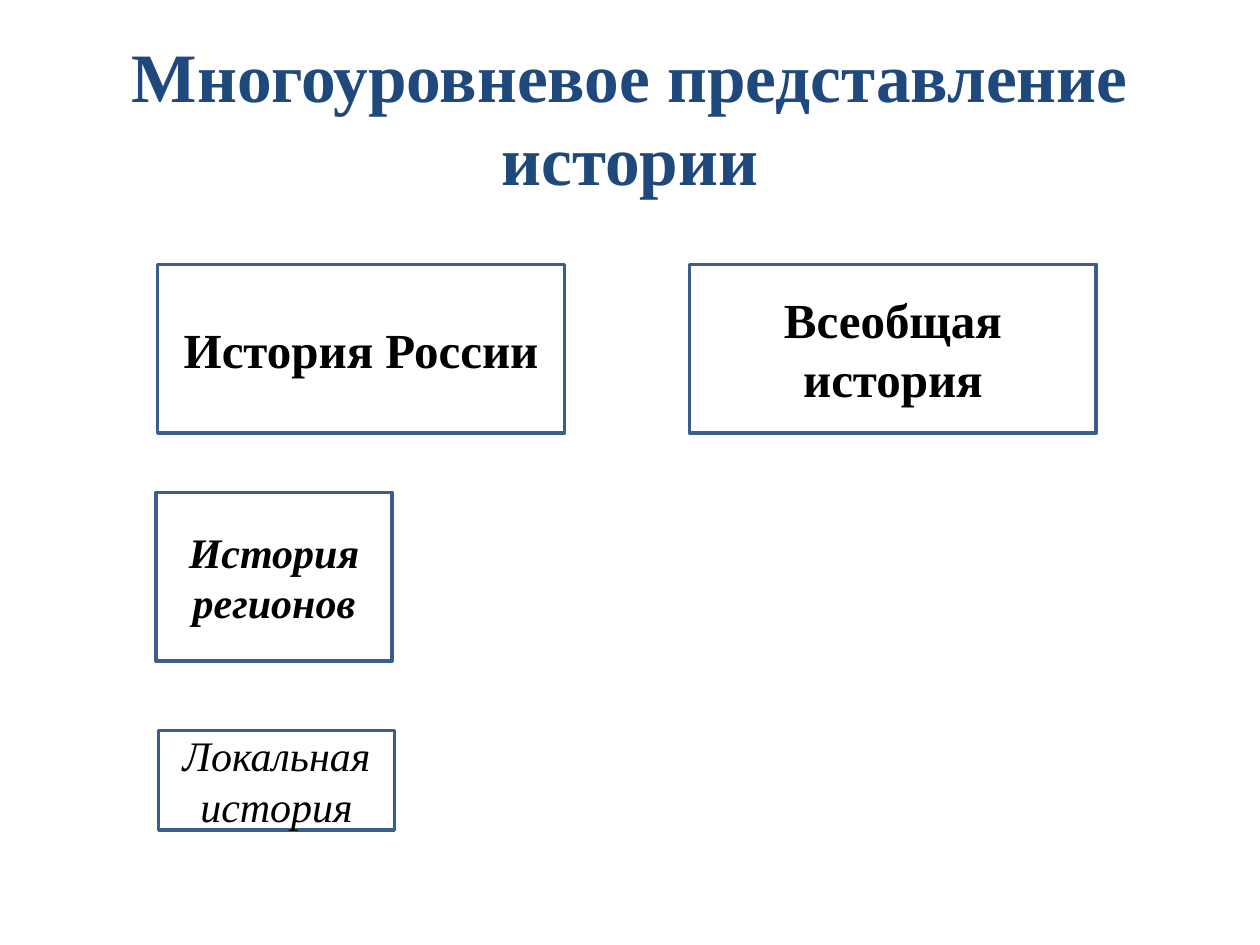
from dataclasses import dataclass

from pptx import Presentation
from pptx.dml.color import RGBColor
from pptx.enum.shapes import MSO_SHAPE
from pptx.enum.text import MSO_ANCHOR, MSO_AUTO_SIZE, PP_ALIGN
from pptx.util import Cm, Pt


@dataclass(frozen=True)
class Theme:
    font: str = "Times New Roman"
    title: RGBColor = RGBColor(0x1F, 0x49, 0x7D)
    text: RGBColor = RGBColor(0, 0, 0)
    fill: RGBColor = RGBColor(0xFF, 0xFF, 0xFF)
    line: RGBColor = RGBColor(0x3A, 0x5F, 0x8C)
    line_width: Pt = Pt(2)
    title_size: Pt = Pt(39.6)
    main_size: Pt = Pt(28)
    sub_size: Pt = Pt(24)


THEME = Theme()


def set_text(sp, text, color, **fmt):
    tf = sp.text_frame
    for name, value in {"word_wrap": True, "auto_size": MSO_AUTO_SIZE.NONE,
                        "vertical_anchor": MSO_ANCHOR.MIDDLE}.items():
        setattr(tf, name, value)
    p = tf.paragraphs[0]
    p.alignment = PP_ALIGN.CENTER
    r = p.add_run()
    r.text = text
    for name, value in {"name": THEME.font, **fmt}.items():
        setattr(r.font, name, value)
    r.font.color.rgb = color


def add_title(s, box, text):
    sp = s.shapes.title
    for name, value in zip(("left", "top", "width", "height"), box):
        setattr(sp, name, value)
    set_text(sp, text, THEME.title, size=THEME.title_size, bold=True)


def add_box(s, box, text, **fmt):
    sp = s.shapes.add_shape(MSO_SHAPE.RECTANGLE, *box)
    sp.shadow.inherit = False
    sp.fill.solid()
    sp.fill.fore_color.rgb = THEME.fill
    sp.line.color.rgb = THEME.line
    sp.line.width = THEME.line_width
    set_text(sp, text, THEME.text, **fmt)


def add_main_row(s, box, labels, gap):
    left, top, width, height = box
    box_width = (width - gap * (len(labels) - 1)) // len(labels)
    for i, label in enumerate(labels):
        add_box(s, (left + i * (box_width + gap), top, box_width, height),
                label, size=THEME.main_size, bold=True)


def add_sub_levels(s, box, levels):
    left, top, width, _ = box
    for label, dx, dy, height, bold in levels:
        add_box(s, (left + dx, top + dy, width, height), label,
                size=THEME.sub_size, bold=bold, italic=True)


def main():
    prs = Presentation()
    prs.slide_width, prs.slide_height = Cm(25.4), Cm(19.05)
    s = prs.slides.add_slide(prs.slide_layouts[5])
    add_title(s, (Cm(1.27), Cm(0.76), Cm(22.86), Cm(3.18)),
              "Многоуровневое представление истории")
    add_main_row(s, (Cm(3.18), Cm(5.33), Cm(18.92), Cm(3.4)),
                 ("История России", "Всеобщая история"), Cm(2.52))
    add_sub_levels(s, (Cm(3.15), Cm(9.93), Cm(4.75), Cm(6.8)), (
        ("История регионов", Cm(0), Cm(0), Cm(3.4), True),
        ("Локальная история", Cm(0.05), Cm(4.8), Cm(2), False),
    ))
    prs.save("out.pptx")


if __name__ == "__main__":
    main()
